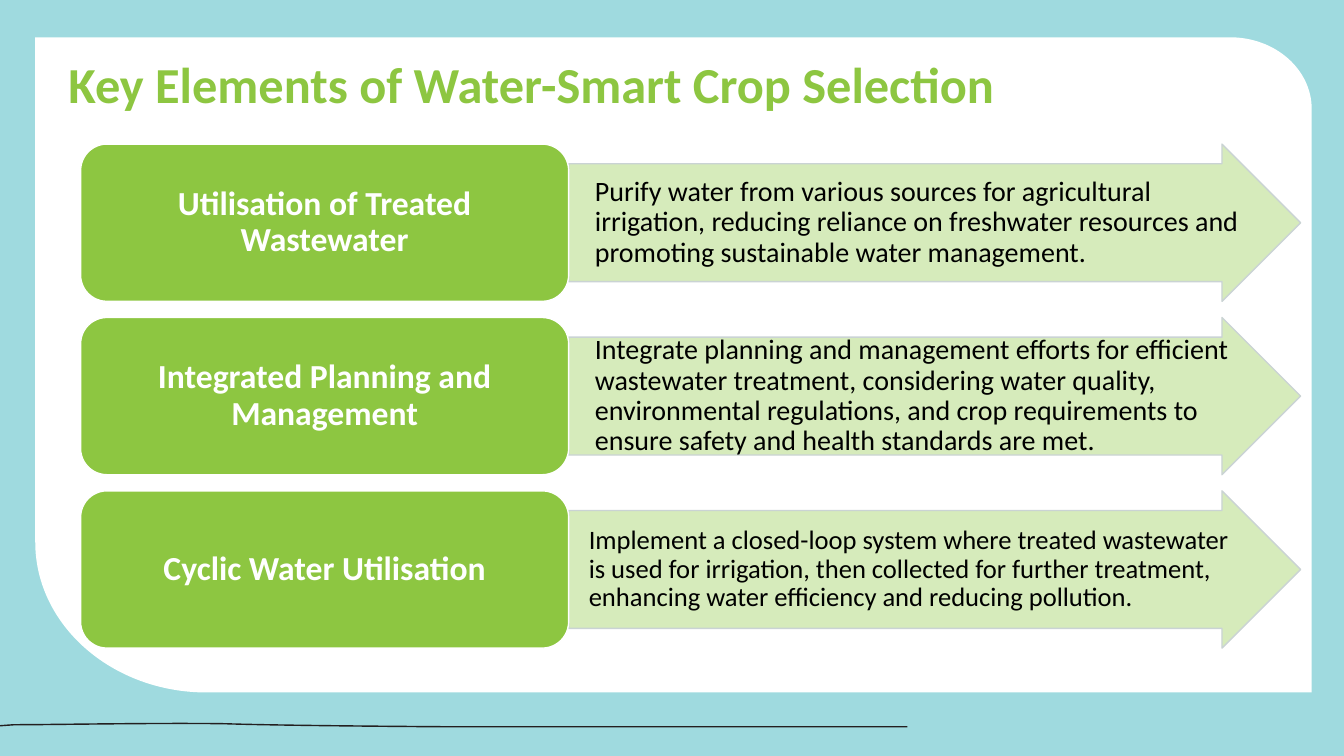
from pptx import Presentation
from pptx.dml.color import RGBColor
from pptx.enum.shapes import MSO_SHAPE as SHAPE
from pptx.enum.text import MSO_ANCHOR as ANCHOR, PP_ALIGN as ALIGN
from pptx.oxml.ns import qn
from pptx.util import Inches, Pt

# Content
TITLE = "Key Elements of Water-Smart Crop Selection"
ELEMENTS = [  # heading, description, description size, description indent
    ("Utilisation of Treated Wastewater",
     "Purify water from various sources for agricultural irrigation, reducing reliance on "
     "freshwater resources and promoting sustainable water management.", 20, 0.26),
    ("Integrated Planning and Management",
     "Integrate planning and management efforts for efficient wastewater treatment, "
     "considering water quality, environmental regulations, and crop requirements to "
     "ensure safety and health standards are met.", 20, 0.26),
    ("Cyclic Water Utilisation",
     "Implement a closed-loop system where treated wastewater is used for irrigation, then "
     "collected for further treatment, enhancing water efficiency and reducing pollution.",
     19, 0.2),
]
COLORS = {"aqua": "9FDADF", "white": "FFFFFF", "green": "8DC641", "pale": "D6EBBB",
          "outline": "CAD3D4", "ink": "231F20", "black": "000000"}
FONT = "Calibri"

# Outlines, in inches: L takes one point, C takes three
PANEL = [(0.35, 0.37), (12.2, 0.37), (12.65, 0.37), (13.01, 0.69), (13.01, 1.08),
         (13.01, 6.87), (2.05, 6.87), (1.11, 6.87), (0.35, 6.2), (0.35, 5.38)]
PANEL_KINDS = "LCLLC"
WAVE = [(0, 7.2), (0.14, 7.19), (0.52, 7.19), (1.55, 7.17), (2.23, 7.18),
        (2.81, 7.2), (4.41, 7.21), (4.43, 7.21), (9, 7.21)]
WAVE_KINDS = "LCCL"
WAVE_HALF = 0.5 / 72

# Layout, in inches
WIDTH, HEIGHT = 13.33, 7.5
LEFT, TOP = 0.8, 1.43
BOX_W, ARROW_W, TEXT_W = 4.84, 7.26, 6.67
ROW_H, ROW_STEP = 1.56, 1.72
SHAFT = 0.75  # share of the arrow's height


def color(name):
    return RGBColor.from_string(COLORS[name])


def paint(sp, fill, line=None):
    sp.shadow.inherit = False
    sp.fill.solid()
    sp.fill.fore_color.rgb = color(fill)
    if line:
        sp.line.color.rgb = color(line)
        sp.line.width = Pt(1)
    else:
        sp.line.fill.background()


def add_outline(slide, pts, kinds, fill):
    pts = [(Inches(x), Inches(y)) for x, y in pts]
    builder = slide.shapes.build_freeform(*pts[0])
    builder.add_line_segments(pts[1:], close=True)
    sp = builder.convert_to_shape()
    # Merge each run of three segments marked C into one curve
    segments = iter(list(sp._element.iter(qn("a:lnTo"))))
    for kind in kinds:
        segment = next(segments)
        if kind == "C":
            segment.tag = qn("a:cubicBezTo")
            for extra in (next(segments), next(segments)):
                segment.append(extra[0])
                extra.getparent().remove(extra)
    paint(sp, fill)


def write(sp, text, size, font_color, bold=False, align=ALIGN.LEFT,
          anchor=ANCHOR.MIDDLE, insets=(0.1, 0.05, 0.1, 0.05)):
    tf = sp.text_frame
    tf.word_wrap = True
    tf.vertical_anchor = anchor
    tf.margin_left, tf.margin_top, tf.margin_right, tf.margin_bottom = map(Inches, insets)
    tf.text = text
    p = tf.paragraphs[0]
    p.alignment = align
    p.line_spacing = 0.9
    font = p.runs[0].font
    font.name, font.size, font.bold = FONT, Pt(size), bold
    font.color.rgb = color(font_color)


def add_row(slide, row, heading, description, size, indent):
    y = TOP + row * ROW_STEP
    arrow_x = Inches(LEFT + BOX_W)
    arrow = slide.shapes.add_shape(SHAPE.RIGHT_ARROW, arrow_x, Inches(y),
                                   Inches(ARROW_W), Inches(ROW_H))
    arrow.adjustments[0], arrow.adjustments[1] = SHAFT, 0.5
    paint(arrow, "pale", "outline")

    # The description fills the arrow's shaft
    note = slide.shapes.add_textbox(arrow_x, Inches(y + ROW_H * (1 - SHAFT) / 2),
                                    Inches(TEXT_W), Inches(ROW_H * SHAFT))
    write(note, description, size, "black", insets=(indent, 0.01, 0.01, 0.01))

    box = slide.shapes.add_shape(SHAPE.ROUNDED_RECTANGLE, Inches(LEFT), Inches(y),
                                 Inches(BOX_W), Inches(ROW_H))
    box.adjustments[0] = 0.167
    paint(box, "green", "white")
    write(box, heading, 24, "white", bold=True, align=ALIGN.CENTER)


def main():
    prs = Presentation()
    prs.slide_width, prs.slide_height = Inches(WIDTH), Inches(HEIGHT)
    slide = prs.slides.add_slide(prs.slide_layouts[6])
    slide.background.fill.solid()
    slide.background.fill.fore_color.rgb = color("aqua")

    # White panel and the thin wave below it
    add_outline(slide, PANEL, PANEL_KINDS, "white")
    upper = [(x, y - WAVE_HALF) for x, y in WAVE]
    lower = [(x, y + WAVE_HALF) for x, y in reversed(WAVE)]
    add_outline(slide, upper + lower, WAVE_KINDS + "L" + WAVE_KINDS[::-1], "ink")

    # Title
    title = slide.shapes.add_textbox(Inches(0.58), Inches(0.55), Inches(11.59), Inches(0.88))
    write(title, TITLE, 36, "green", bold=True, anchor=ANCHOR.TOP)

    # Element rows
    for row, element in enumerate(ELEMENTS):
        add_row(slide, row, *element)

    prs.save("out.pptx")


if __name__ == "__main__":
    main()
